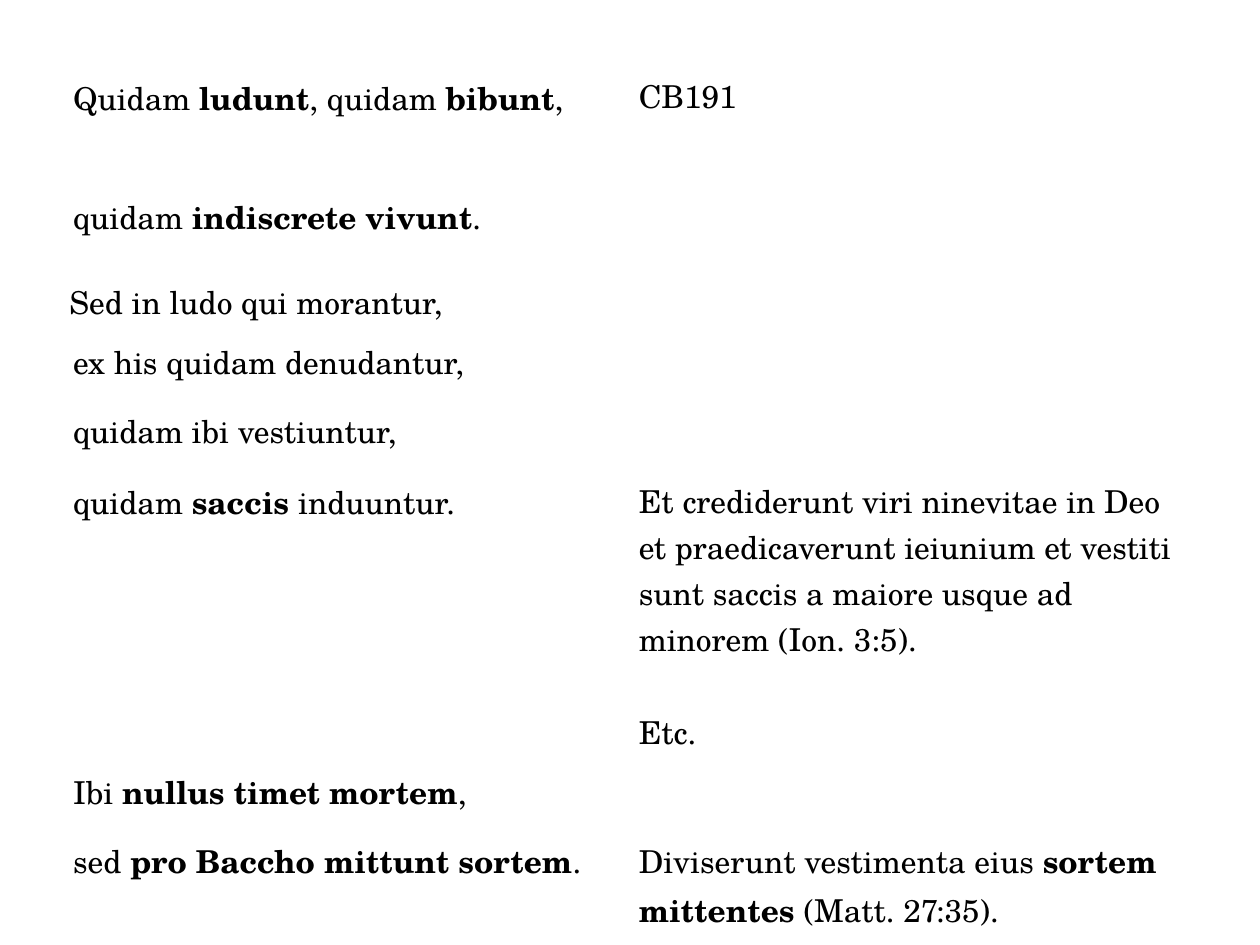
import pptx
import pptx.util
import pptx.dml.color
from pptx.util import Inches

THEME = {
    "font": "TeX Gyre Schola",
    "size": pptx.util.Pt(18),
    "text": pptx.dml.color.RGBColor(0x00, 0x00, 0x00),
    "page": pptx.dml.color.RGBColor(0xFF, 0xFF, 0xFF),
    "paragraph_gap": pptx.util.Pt(26.5),
    "tall_line": 1.5,
}

COLUMN_WIDTH = 4.49
ROW_HEIGHTS = [0.95, 0.55, 0.61, 0.55, 0.55, 1.76, 0.55, 0.95]
COUPLET_ROW = 2

VERSES = [
    "Quidam *ludunt*, quidam *bibunt*,",
    "quidam *indiscrete vivunt*.",
    "Sed in ludo qui morantur,",
    "ex his quidam denudantur,",
    "quidam ibi vestiuntur,",
    "quidam *saccis *induuntur.",
    "Ibi *nullus timet mortem*,",
    "sed *pro Baccho mittunt sortem*.",
]
SOURCES = {
    0: ["CB191"],
    5: [
        "Et crediderunt viri ninevitae in Deo et praedicaverunt ieiunium "
        "et vestiti sunt saccis a maiore usque ad minorem (Ion. 3:5).",
        "Etc.",
    ],
    7: ["Diviserunt vestimenta eius *sortem mittentes* (Matt. 27:35)."],
}


class SlideBuilder:
    def __init__(self, prs, theme):
        self.theme = theme
        self.s = prs.slides.add_slide(prs.slide_layouts[6])

    def add_table(self, left, top, column_widths, row_heights):
        frame = self.s.shapes.add_table(
            len(row_heights), len(column_widths), Inches(left), Inches(top),
            Inches(sum(column_widths)), Inches(sum(row_heights)))
        table = frame.table
        table.first_row = False
        table.horz_banding = False
        for column, width in zip(table.columns, column_widths):
            column.width = Inches(width)
        for row, height in zip(table.rows, row_heights):
            row.height = Inches(height)
            for cell in row.cells:
                cell.fill.solid()
                cell.fill.fore_color.rgb = self.theme["page"]
        return table

    def fill_cell(self, cell, paragraphs):
        tf = cell.text_frame
        for i, text in enumerate(paragraphs):
            p = tf.add_paragraph() if i else tf.paragraphs[0]
            if i:
                p.space_before = self.theme["paragraph_gap"]
            for j, part in enumerate(text.split("*")):
                if part:
                    self.add_text(p, part, j % 2 == 1)

    def add_text(self, p, text, bold):
        r = p.add_run()
        r.text = text
        style = {"name": self.theme["font"], "size": self.theme["size"], "bold": bold}
        for name, value in style.items():
            setattr(r.font, name, value)
        r.font.color.rgb = self.theme["text"]

    def open_couplet(self, cell):
        margins = {
            "margin_left": Inches(0.07),
            "margin_right": Inches(0.07),
            "margin_top": 0,
            "margin_bottom": 0,
        }
        for name, value in margins.items():
            setattr(cell, name, value)
        cell.text_frame.paragraphs[0].line_spacing = self.theme["tall_line"]


def main():
    prs = pptx.Presentation()
    prs.slide_width, prs.slide_height = Inches(10), Inches(7.5)
    builder = SlideBuilder(prs, THEME)
    table = builder.add_table(0.48, 0.53, [COLUMN_WIDTH] * 2, ROW_HEIGHTS)
    table.cell(0, 1).merge(table.cell(1, 1))
    for row, verse in enumerate(VERSES):
        builder.fill_cell(table.cell(row, 0), [verse])
    for row, paragraphs in SOURCES.items():
        builder.fill_cell(table.cell(row, 1), paragraphs)
    builder.open_couplet(table.cell(COUPLET_ROW, 0))
    prs.save("out.pptx")


if __name__ == "__main__":
    main()
